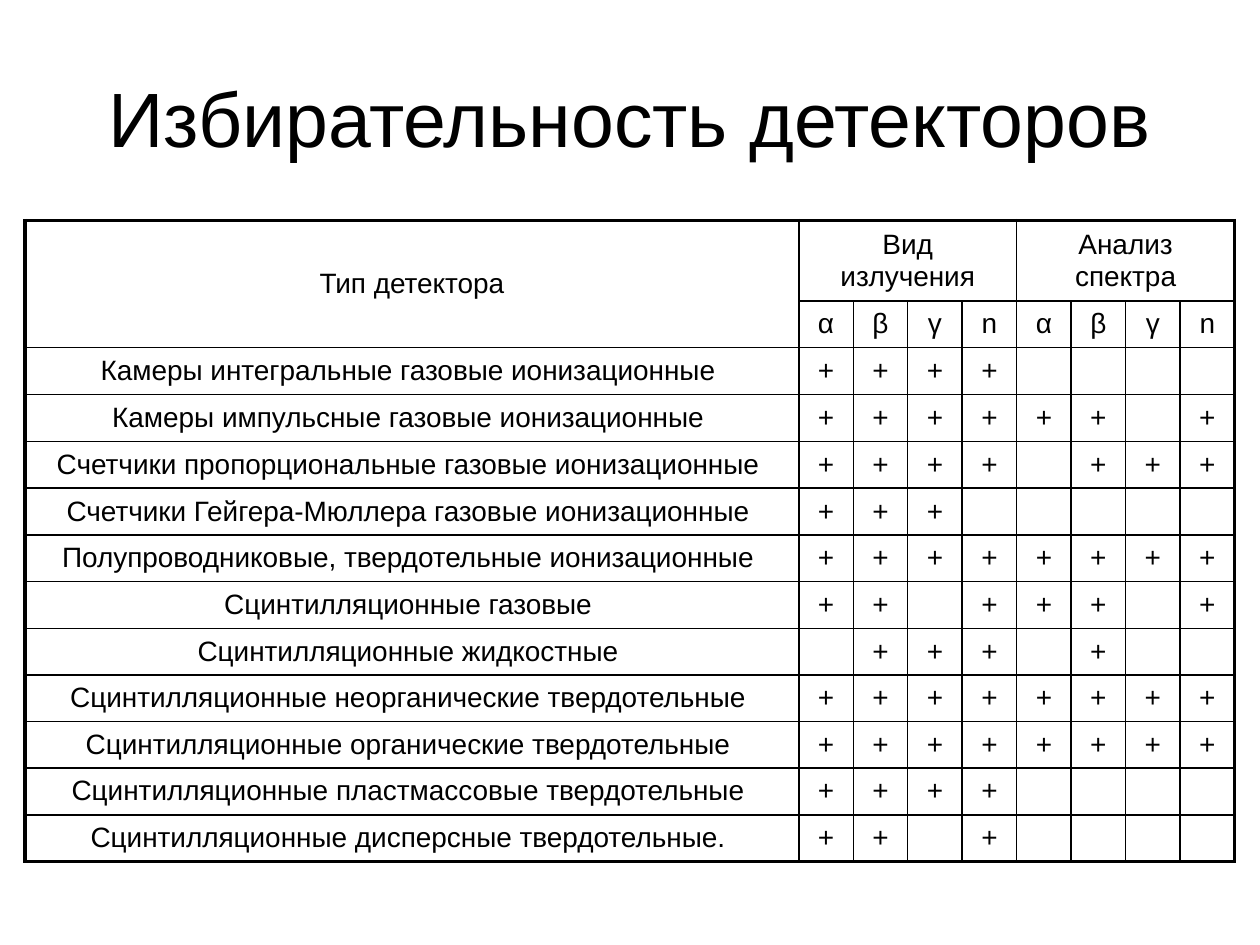
from lxml import etree
from pptx import Presentation
from pptx.dml.color import RGBColor
from pptx.enum.text import MSO_ANCHOR, PP_ALIGN
from pptx.oxml.ns import qn
from pptx.util import Inches, Pt

CENTER = PP_ALIGN.CENTER
MIDDLE = MSO_ANCHOR.MIDDLE
COLORS = {"ink": "000000", "paper": "FFFFFF"}
FONT = "Arial"
TITLE_SIZE, CELL_SIZE = 44, 16
FRAME_WIDTH, GRID_WIDTH = 2.25, 1

# Table geometry in inches
LEFT, TOP, WIDTH, HEIGHT = 0.2, 1.75, 9.6, 5.06
NAME_WIDTH, GROUP_HEIGHT = 6.14, 0.64

# Header groups and the radiation kinds repeated under each of them
NAME_HEADING = "Тип детектора"
GROUPS = ["Вид излучения", "Анализ спектра"]
KINDS = ["α", "β", "γ", "n"]

# Detector name, detected kinds, kinds with spectrum analysis
DETECTORS = [
    ("Камеры интегральные газовые ионизационные ", "αβγn", ""),
    ("Камеры импульсные газовые ионизационные ", "αβγn", "αβn"),
    ("Счетчики пропорциональные газовые ионизационные ", "αβγn", "βγn"),
    ("Счетчики Гейгера-Мюллера газовые ионизационные ", "αβγ", ""),
    ("Полупроводниковые, твердотельные ионизационные ", "αβγn", "αβγn"),
    ("Сцинтилляционные газовые ", "αβn", "αβn"),
    ("Сцинтилляционные жидкостные ", "βγn", "β"),
    ("Сцинтилляционные неорганические твердотельные ", "αβγn", "αβγn"),
    ("Сцинтилляционные органические твердотельные ", "αβγn", "αβγn"),
    ("Сцинтилляционные пластмассовые твердотельные ", "αβγn", ""),
    ("Сцинтилляционные дисперсные твердотельные. ", "αβn", ""),
]


def add_run(paragraph, text, size):
    run = paragraph.add_run()
    run.text = text
    run.font.name = FONT
    run.font.size = Pt(size)
    run.font.color.rgb = RGBColor.from_string(COLORS["ink"])


def add_title(slide, text):
    title = slide.shapes.title
    title.left, title.top = Inches(0.5), Inches(0.3)
    title.width, title.height = Inches(9), Inches(1.25)
    title.text_frame.vertical_anchor = MIDDLE
    heading = title.text_frame.paragraphs[0]
    heading.alignment = CENTER
    add_run(heading, text, TITLE_SIZE)


def write_cell(cell, text):
    cell.vertical_anchor = MIDDLE
    cell.margin_left = cell.margin_right = Inches(0.1)
    cell.margin_top = cell.margin_bottom = Inches(0.05)
    paragraph = cell.text_frame.paragraphs[0]
    paragraph.alignment = CENTER
    # Space before is a share of the line height
    before = etree.SubElement(paragraph._p.get_or_add_pPr(), qn("a:spcBef"))
    etree.SubElement(before, qn("a:spcPct"), val="20000")
    if text:
        add_run(paragraph, text, CELL_SIZE)
    else:
        # Keeps an empty row as low as a filled one
        etree.SubElement(paragraph._p, qn("a:endParaRPr"),
                         sz=str(CELL_SIZE * 100))


def draw_borders(cell, on_frame):
    """Draw each side; the outer frame is heavier than the grid."""
    properties = cell._tc.get_or_add_tcPr()
    for side in ("L", "R", "T", "B"):
        width = FRAME_WIDTH if side in on_frame else GRID_WIDTH
        line = etree.SubElement(properties, qn(f"a:ln{side}"),
                                w=str(Pt(width)))
        fill = etree.SubElement(line, qn("a:solidFill"))
        etree.SubElement(fill, qn("a:srgbClr"), val=COLORS["ink"])


def table_rows():
    blank = [""] * (len(KINDS) - 1)
    group_row = [NAME_HEADING]
    for group in GROUPS:
        group_row += [group] + blank
    rows = [group_row, [""] + KINDS * len(GROUPS)]
    for name, *marked in DETECTORS:
        rows.append([name] + ["+" if kind in kinds else ""
                              for kinds in marked for kind in KINDS])
    return rows


def add_detector_table(slide):
    rows = table_rows()
    row_count, column_count = len(rows), len(rows[0])
    table = slide.shapes.add_table(
        row_count, column_count, Inches(LEFT), Inches(TOP),
        Inches(WIDTH), Inches(HEIGHT)).table
    table.first_row = table.horz_banding = False

    # One wide name column, one tall group row, the rest equal
    for i, column in enumerate(table.columns):
        share = (WIDTH - NAME_WIDTH) / (column_count - 1)
        column.width = Inches(share if i else NAME_WIDTH)
    for i, row in enumerate(table.rows):
        share = (HEIGHT - GROUP_HEIGHT) / (row_count - 1)
        row.height = Inches(share if i else GROUP_HEIGHT)

    # Header spans
    table.cell(0, 0).merge(table.cell(1, 0))
    for first in range(1, column_count, len(KINDS)):
        table.cell(0, first).merge(table.cell(0, first + len(KINDS) - 1))

    for r, texts in enumerate(rows):
        for c, text in enumerate(texts):
            cell = table.cell(r, c)
            last_column = c + cell.span_width - 1
            on_frame = [side for side, outer in (
                ("L", c == 0), ("R", last_column == column_count - 1),
                ("T", r == 0), ("B", r == row_count - 1)) if outer]
            write_cell(cell, text)
            draw_borders(cell, on_frame)
            cell.fill.background()


def main():
    deck = Presentation()
    deck.slide_width, deck.slide_height = Inches(10), Inches(7.5)
    slide = deck.slides.add_slide(deck.slide_layouts[5])
    slide.background.fill.solid()
    slide.background.fill.fore_color.rgb = RGBColor.from_string(COLORS["paper"])
    add_title(slide, "Избирательность детекторов")
    add_detector_table(slide)
    deck.save("out.pptx")


if __name__ == "__main__":
    main()
